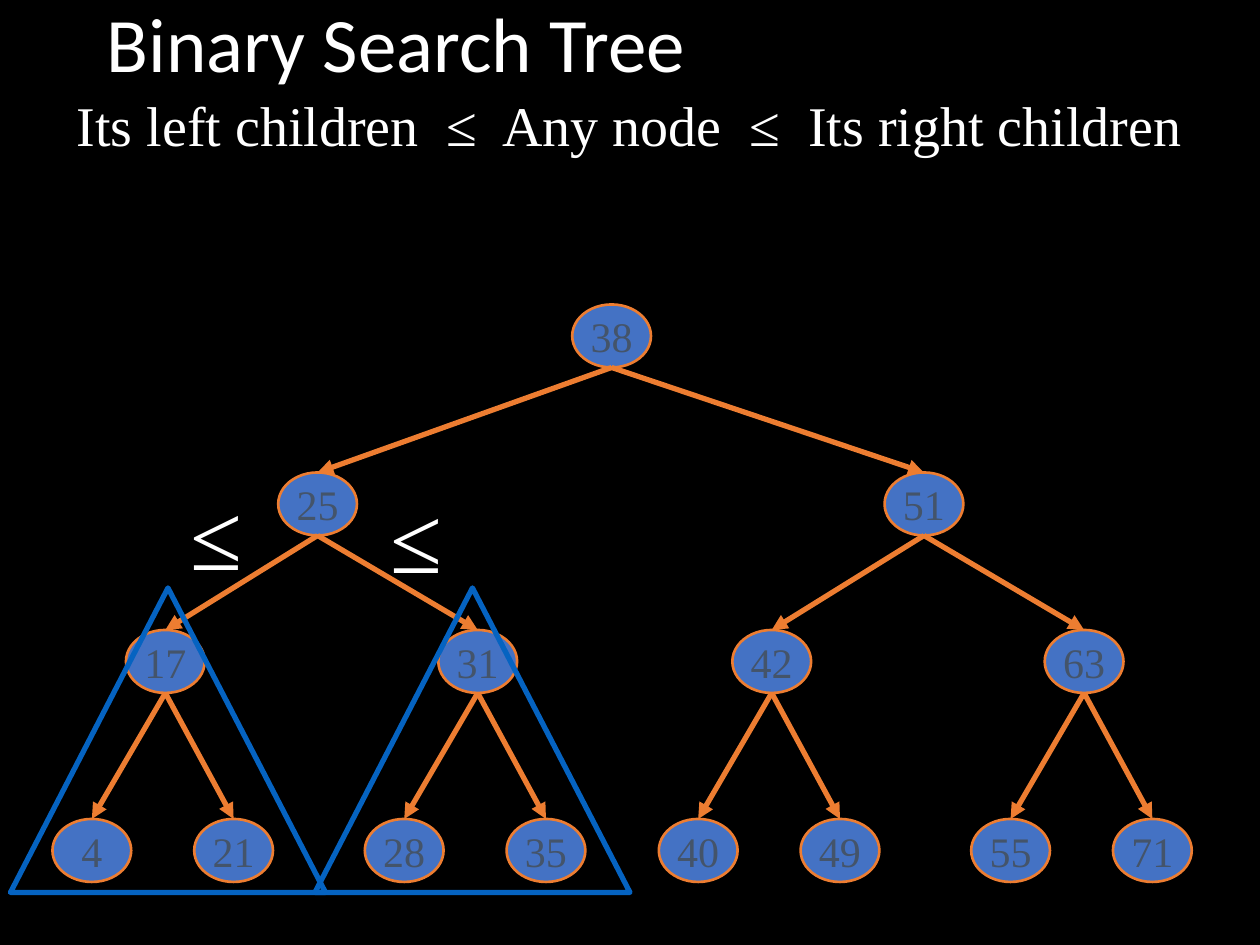
from lxml.etree import SubElement
from pptx import Presentation
from pptx.dml.color import RGBColor
from pptx.enum.shapes import MSO_CONNECTOR, MSO_SHAPE
from pptx.enum.text import MSO_ANCHOR, PP_ALIGN
from pptx.oxml.ns import qn
from pptx.util import Inches, Pt

BLACK = RGBColor(0x00, 0x00, 0x00)
WHITE = RGBColor(0xFF, 0xFF, 0xFF)
NODE_BLUE = RGBColor(0x44, 0x72, 0xC4)
SUBTREE_BLUE = RGBColor(0x05, 0x63, 0xC1)
ORANGE = RGBColor(0xED, 0x7D, 0x31)
SLATE = RGBColor(0x44, 0x54, 0x6A)

WIDTH, HEIGHT = Inches(10), Inches(7.5)
COLUMN, ROW = WIDTH / 120, HEIGHT / 90
NODE_COLUMNS, NODE_ROWS = 7.5, 6
LEVEL_ROWS = [29, 45, 60, 78]
CHILD_OFFSETS = [(-28, 29.75), (-14.5, 15.25), (-7, 6.5)]
ROOT_COLUMN = 58.25
TREE = (38, (25, (17, (4,), (21,)), (31, (28,), (35,))),
        (51, (42, (40,), (49,)), (63, (55,), (71,))))

SERIF = {"name": "Times New Roman"}
TITLE_FONT = {"name": "Calibri", "size": Pt(44)}
RULE_FONT = {**SERIF, "size": Pt(32)}
SIGN_FONT = {**SERIF, "size": Pt(54)}
NODE_FONT = {**SERIF, "size": Pt(24)}


def grid_box(column, row, columns, rows):
    """Convert grid units to left, top, width and height."""
    return [round(v) for v in (column * COLUMN, row * ROW, columns * COLUMN, rows * ROW)]


def apply(target, formats):
    """Set each attribute named in formats."""
    for attribute, value in formats.items():
        setattr(target, attribute, value)


def write(holder, words, font, color, frame, paragraph):
    """Put one formatted paragraph into a shape."""
    apply(holder.text_frame, frame)
    line = holder.text_frame.paragraphs[0]
    apply(line, paragraph)
    run = line.add_run()
    run.text = words
    apply(run.font, font)
    run.font.color.rgb = color


def add_label(slide, box, words, font, frame, paragraph):
    """Add white text in a grid box."""
    label = slide.shapes.add_textbox(*grid_box(*box))
    write(label, words, font, WHITE, frame, paragraph)


def add_outline(slide, preset, box, color, weight):
    """Add a shadowless preset shape with a coloured outline."""
    outline = slide.shapes.add_shape(preset, *grid_box(*box))
    outline.shadow.inherit = False
    outline.fill.background()
    outline.line.color.rgb = color
    outline.line.width = Pt(weight)
    return outline


def add_node(slide, key, center, level):
    """Add one tree node with its key."""
    box = (center - NODE_COLUMNS / 2, LEVEL_ROWS[level], NODE_COLUMNS, NODE_ROWS)
    node = add_outline(slide, MSO_SHAPE.OVAL, box, ORANGE, 1.5)
    node.fill.solid()
    node.fill.fore_color.rgb = NODE_BLUE
    write(node, str(key), NODE_FONT, SLATE,
          {"word_wrap": False, "vertical_anchor": MSO_ANCHOR.MIDDLE},
          {"alignment": PP_ALIGN.CENTER})
    return node


def add_branch(slide, parent, child):
    """Draw an arrow from a parent's bottom to a child's top."""
    branch = slide.shapes.add_connector(
        MSO_CONNECTOR.STRAIGHT,
        parent.left + parent.width // 2, parent.top + parent.height,
        child.left + child.width // 2, child.top)
    branch.end_connect(child, 0)
    branch.line.color.rgb = ORANGE
    branch.line.width = Pt(3)
    SubElement(branch.line._get_or_add_ln(), qn("a:tailEnd"), type="triangle")
    SubElement(branch._element.spPr, qn("a:effectLst"))


def add_tree(slide, tree, center, level=0):
    """Draw a tree recursively and return its top node."""
    key, *children = tree
    node = add_node(slide, key, center, level)
    if children:
        for child, offset in zip(children, CHILD_OFFSETS[level]):
            add_branch(slide, node, add_tree(slide, child, center + offset, level + 1))
    return node


def main():
    """Build the binary search tree slide."""
    deck = Presentation()
    apply(deck, {"slide_width": WIDTH, "slide_height": HEIGHT})
    slide = deck.slides.add_slide(deck.slide_layouts[6])
    slide.background.fill.solid()
    slide.background.fill.fore_color.rgb = BLACK

    add_tree(slide, TREE, ROOT_COLUMN)
    add_label(slide, (9, -3, 102, 15), "Binary Search Tree", TITLE_FONT,
              {"word_wrap": True, "vertical_anchor": MSO_ANCHOR.MIDDLE},
              {"line_spacing": 0.9})
    add_label(slide, (0, 8, 120, 17),
              "Its left children  ≤  Any node  ≤  Its right children", RULE_FONT,
              {"word_wrap": True},
              {"alignment": PP_ALIGN.CENTER, "space_before": Pt(26)})
    for column in (1, 30):
        add_outline(slide, MSO_SHAPE.ISOSCELES_TRIANGLE, (column, 56, 30, 29),
                    SUBTREE_BLUE, 3)
    for column, row in ((17, 44.75), (36, 45)):
        add_label(slide, (column, row, 7.3, 12), "≤", SIGN_FONT,
                  {"word_wrap": False}, {})
    deck.save("out.pptx")


if __name__ == "__main__":
    main()
